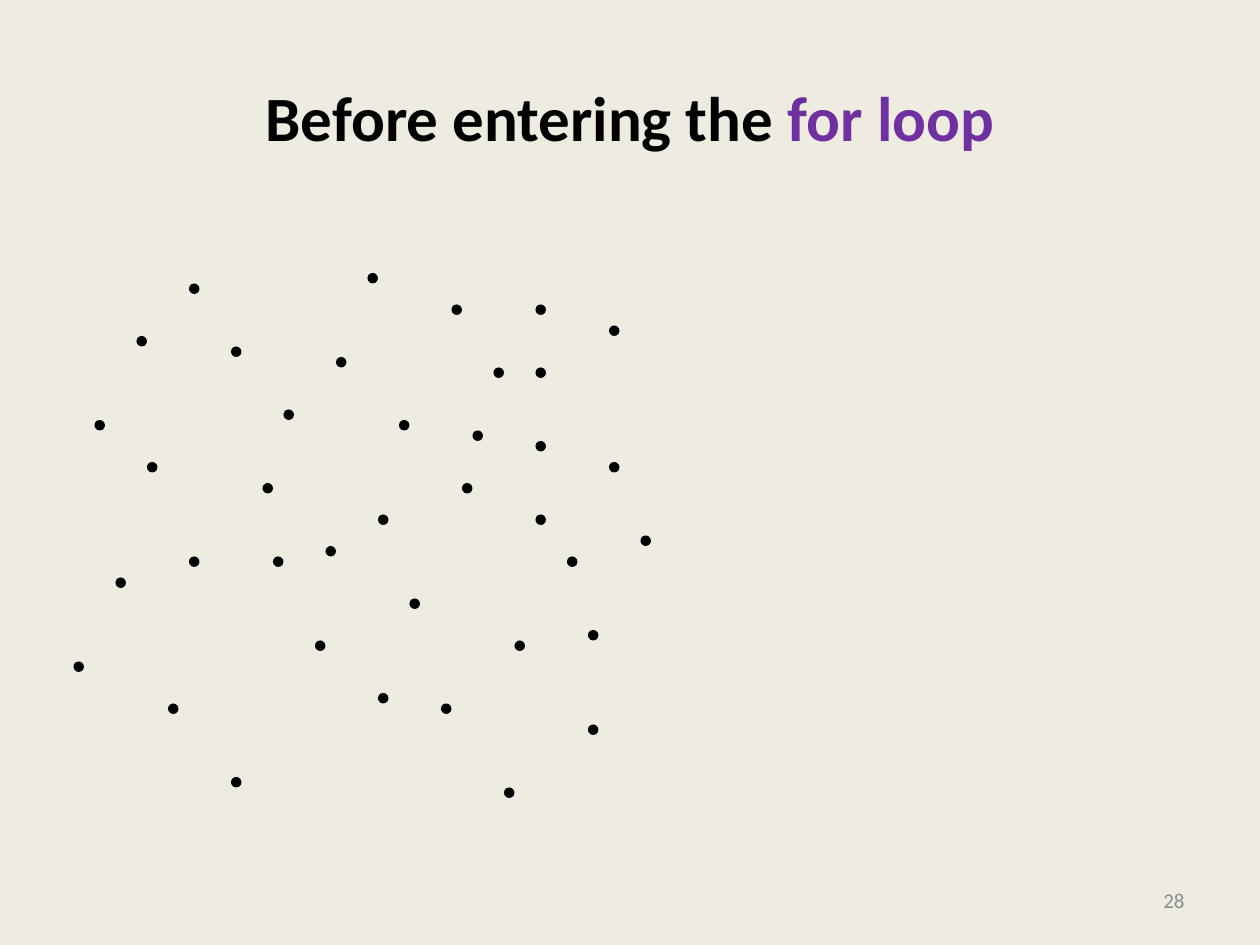
from dataclasses import dataclass

from pptx import Presentation
from pptx import util as u
from pptx.dml.color import RGBColor
from pptx.enum import shapes, text


@dataclass(frozen=True)
class Theme:
    """Colours, font and type sizes of the slide."""

    background: str = "EEECE1"
    ink: str = "000000"
    accent: str = "7030A0"
    muted: str = "8C8C8C"
    font: str = "Calibri"
    title_size: int = 36
    number_size: int = 12


GRID = 2.54 / 12
POINTS = [
    (25, 46), (58, 44), (22, 33), (43, 29), (16, 67), (14, 44), (48, 75), (51, 35),
    (56, 60), (30, 61), (54, 53), (49, 61), (38, 40), (42, 67), (26, 53), (44, 46),
    (36, 66), (32, 34), (18, 53), (27, 39), (31, 52), (39, 57), (36, 49), (9, 40),
    (18, 27), (13, 32), (7, 63), (22, 74), (11, 55), (58, 31), (35, 26), (47, 35),
    (51, 42), (51, 29), (45, 41), (51, 49), (61, 51), (56, 69),
]


def add_run(paragraph, words, *, font, size, color, bold=False):
    """Append formatted text to a paragraph."""
    run = paragraph.add_run()
    run.text = words
    run.font.name = font
    run.font.size = u.Pt(size)
    run.font.bold = bold
    run.font.color.rgb = RGBColor.from_string(color)


class SlideBuilder:
    """Hold the theme and the current slide."""

    def __init__(self, slide, theme):
        """Keep the slide and paint its background."""
        self.slide = slide
        self.theme = theme
        fill = slide.background.fill
        fill.solid()
        fill.fore_color.rgb = RGBColor.from_string(theme.background)

    def title(self, parts):
        """Fill the title placeholder with coloured parts."""
        shape = self.slide.shapes.title
        shape.left, shape.top = u.Cm(1.27), u.Cm(0.76)
        shape.width, shape.height = u.Cm(22.86), u.Cm(3.18)
        shape.text_frame.vertical_anchor = text.MSO_ANCHOR.MIDDLE
        paragraph = shape.text_frame.paragraphs[0]
        paragraph.alignment = text.PP_ALIGN.CENTER
        for words, color in parts:
            add_run(paragraph, words, font=self.theme.font,
                    size=self.theme.title_size, color=color, bold=True)

    def page_number(self, number):
        """Write the page number at the lower right."""
        box = self.slide.shapes.add_textbox(u.Cm(18.2), u.Cm(17.65), u.Cm(5.93), u.Cm(1.01))
        box.text_frame.word_wrap = True
        box.text_frame.vertical_anchor = text.MSO_ANCHOR.MIDDLE
        paragraph = box.text_frame.paragraphs[0]
        paragraph.alignment = text.PP_ALIGN.RIGHT
        add_run(paragraph, str(number), font=self.theme.font,
                size=self.theme.number_size, color=self.theme.muted)

    def dot(self, column, row):
        """Draw one point in a grid cell."""
        shape = self.slide.shapes.add_shape(
            shapes.MSO_SHAPE.OVAL, u.Cm(column * GRID), u.Cm(row * GRID), u.Cm(GRID), u.Cm(GRID))
        shape.shadow.inherit = False
        shape.fill.solid()
        shape.fill.fore_color.rgb = RGBColor.from_string(self.theme.ink)
        shape.line.fill.background()


def main():
    """Build and save the slide."""
    presentation = Presentation()
    presentation.slide_width, presentation.slide_height = u.Cm(25.4), u.Cm(19.05)
    theme = Theme()
    slide = presentation.slides.add_slide(presentation.slide_layouts.get_by_name("Title Only"))
    builder = SlideBuilder(slide, theme)
    builder.title([("Before entering the ", theme.ink), ("for loop", theme.accent)])
    builder.page_number(28)
    for column, row in POINTS:
        builder.dot(column, row)
    presentation.save("out.pptx")


if __name__ == "__main__":
    main()
